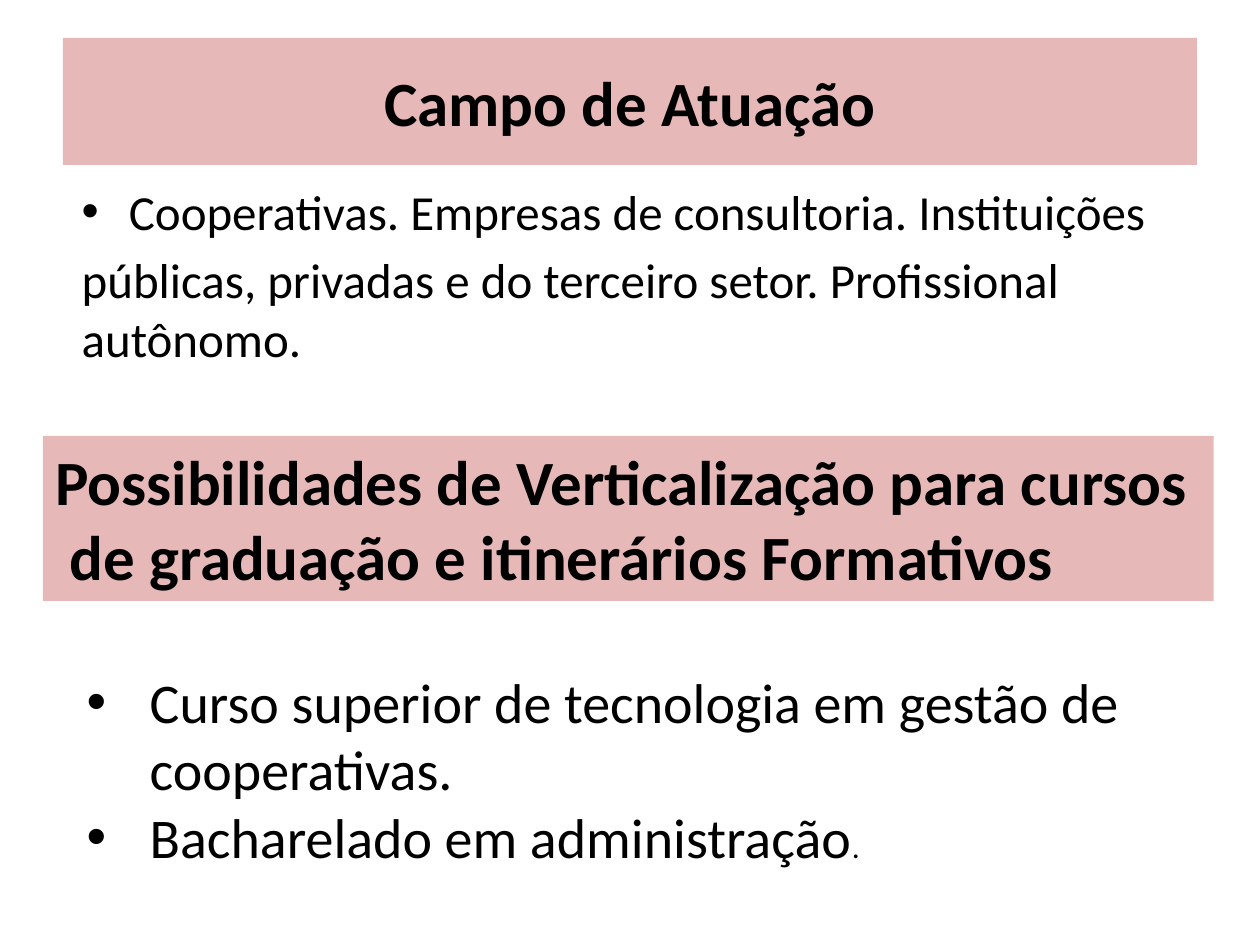
from dataclasses import dataclass

from lxml import etree
from pptx import Presentation
from pptx.dml.color import RGBColor
from pptx.enum.shapes import MSO_SHAPE
from pptx.enum.text import MSO_ANCHOR, PP_ALIGN
from pptx.oxml.ns import qn
from pptx.util import Pt

RECT = MSO_SHAPE.RECTANGLE
TOP, MIDDLE = MSO_ANCHOR.TOP, MSO_ANCHOR.MIDDLE
LEFT, CENTER = PP_ALIGN.LEFT, PP_ALIGN.CENTER
BLACK = RGBColor(0x00, 0x00, 0x00)
PINK = RGBColor(0xE6, 0xB9, 0xB8)
FONT = "Calibri"


@dataclass
class Box:
    left: float
    top: float
    width: float
    height: float


@dataclass
class Line:
    text: str
    indent: float = 0  # hanging indent of a bullet, none if 0
    tail: str = ""  # ending in small type


def add_bullet(para, indent: float) -> None:
    props = para._p.get_or_add_pPr()
    props.set("marL", str(Pt(indent)))
    props.set("indent", str(-Pt(indent)))
    etree.SubElement(props, qn("a:buFont")).set("typeface", "Arial")
    etree.SubElement(props, qn("a:buChar")).set("char", "•")


def write(frame, lines: list[Line], size: float, bold=False,
          align=LEFT, anchor=TOP, gap: float = 0) -> None:
    frame.word_wrap = True
    frame.vertical_anchor = anchor
    for i, line in enumerate(lines):
        para = frame.add_paragraph() if i else frame.paragraphs[0]
        para.alignment = align
        para.space_before = Pt(gap)
        font = para.font
        font.name, font.size, font.bold = FONT, Pt(size), bold
        font.color.rgb = BLACK
        if line.indent:
            add_bullet(para, line.indent)
        para.add_run().text = line.text
        if line.tail:
            run = para.add_run()
            run.text = line.tail
            run.font.size = Pt(18)


def place(box: Box) -> tuple:
    return Pt(box.left), Pt(box.top), Pt(box.width), Pt(box.height)


def add_band(slide, box: Box, lines: list[Line], align, anchor) -> None:
    """Draw a pink heading band."""
    band = slide.shapes.add_shape(RECT, *place(box))
    band.shadow.inherit = False
    band.fill.solid()
    band.fill.fore_color.rgb = PINK
    band.line.fill.background()
    write(band.text_frame, lines, 36, True, align, anchor)


def add_body(slide, box: Box, lines: list[Line], size: float,
             gap: float = 0) -> None:
    text = slide.shapes.add_textbox(*place(box))
    write(text.text_frame, lines, size, gap=gap)


def main() -> None:
    deck = Presentation()
    deck.slide_width, deck.slide_height = Pt(720), Pt(540)
    slide = deck.slides.add_slide(deck.slide_layouts[6])

    add_band(slide, Box(36, 21.6, 648, 72.7),
             [Line("Campo de Atuação")], CENTER, MIDDLE)
    add_body(slide, Box(39.6, 100.1, 648, 108), [
        Line("Cooperativas. Empresas de consultoria. Instituições", 27),
        Line("públicas, privadas e do terceiro setor. "
             "Profissional autônomo."),
    ], 28, gap=5.6)

    add_band(slide, Box(24.5, 249.1, 669, 94.3), [
        Line("Possibilidades de Verticalização para cursos"),
        Line(" de graduação e itinerários Formativos"),
    ], LEFT, TOP)
    add_body(slide, Box(42.5, 378, 606, 124), [
        Line("Curso superior de tecnologia em gestão de cooperativas.", 36),
        Line("Bacharelado em administração", 36, "."),
    ], 32)

    deck.save("out.pptx")


if __name__ == "__main__":
    main()
